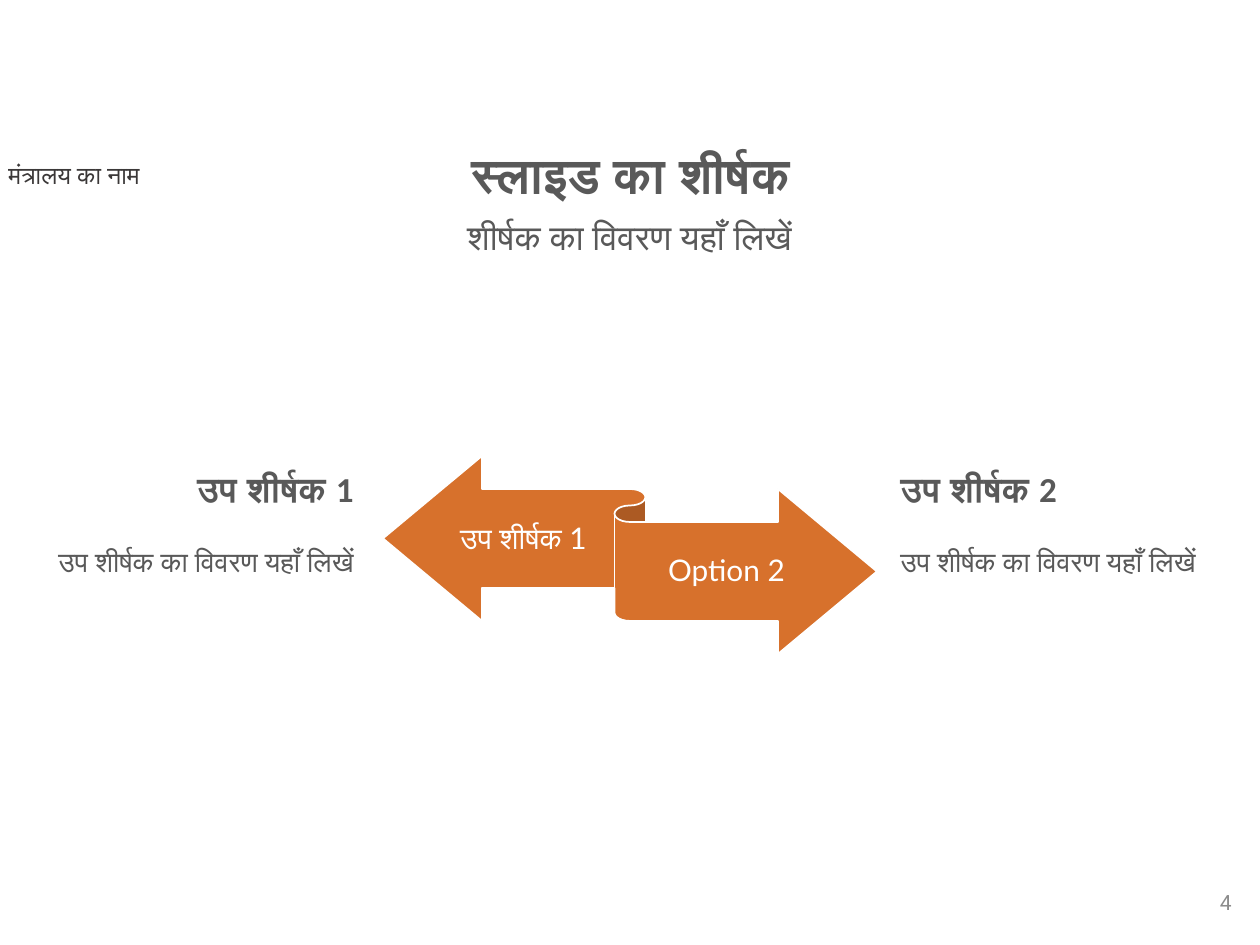
from pptx import Presentation
from pptx import util as u
from pptx.dml import color
from pptx.enum import shapes, text

PX = u.Inches(1) / 126
COLORS = {"orange": "D7712C", "white": "FFFFFF", "dark": "3B3838",
          "gray": "595959", "number": "8C8C8C"}
ALIGN = text.PP_ALIGN
ANCHOR = text.MSO_ANCHOR


def place(shape, box, anchor=ANCHOR.TOP):
    shape.left, shape.top, shape.width, shape.height = [u.Emu(round(n * PX)) for n in box]
    frame = shape.text_frame
    frame.word_wrap = True
    frame.auto_size = text.MSO_AUTO_SIZE.NONE
    frame.vertical_anchor = anchor
    return frame


def write(paragraph, wording, size, color_name, font="Calibri", bold=False,
          align=ALIGN.LEFT, spacing=1.0):
    paragraph.alignment = align
    paragraph.line_spacing = spacing
    run = paragraph.add_run()
    run.text = wording
    run.font.size = u.Pt(size)
    run.font.name = font
    run.font.bold = bold
    run.font.color.rgb = color.RGBColor.from_string(COLORS[color_name])


presentation = Presentation()
presentation.slide_width = u.Inches(10)
presentation.slide_height = u.Inches(7.5)
slide = presentation.slides.add_slide(presentation.slide_layouts[0])

ministry = place(slide.shapes.add_textbox(0, 0, 0, 0), (-4, 154, 275, 43))
write(ministry.paragraphs[0], "मंत्रालय का नाम", 14, "dark")

title = place(slide.shapes.title, (234, 145, 793, 59))
write(title.paragraphs[0], "स्लाइड का शीर्षक", 28, "gray", bold=True,
      align=ALIGN.CENTER, spacing=0.9)

subtitle = place(slide.placeholders[1], (184, 214, 891, 79))
subtitle.paragraphs[0].space_before = u.Pt(0)
write(subtitle.paragraphs[0], "शीर्षक का विवरण यहाँ लिखें", 20, "gray",
      align=ALIGN.CENTER, spacing=0.9)

ribbon = slide.shapes.add_shape(shapes.MSO_SHAPE.LEFT_RIGHT_RIBBON, 0, 0, 0, 0)
place(ribbon, (383, 456, 494, 198))
ribbon.shadow.inherit = False
ribbon.fill.solid()
ribbon.fill.fore_color.rgb = color.RGBColor.from_string(COLORS["orange"])
ribbon.line.color.rgb = color.RGBColor.from_string(COLORS["white"])
ribbon.line.width = u.Pt(1)

for wording, box in (("उप शीर्षक 1", (442, 491, 163, 97)),
                     ("Option 2", (630, 523, 193, 97))):
    label = place(slide.shapes.add_textbox(0, 0, 0, 0), box, ANCHOR.MIDDLE)
    label.margin_left = label.margin_right = 0
    write(label.paragraphs[0], wording, 17, "white", "Lato",
          align=ALIGN.CENTER, spacing=0.9)

for heading, left, align in (("उप शीर्षक 1", 35, ALIGN.RIGHT),
                             ("उप शीर्षक 2", 888, ALIGN.LEFT)):
    option = place(slide.shapes.add_textbox(0, 0, 0, 0), (left, 461, 331, 158))
    write(option.paragraphs[0], heading, 20, "gray", bold=True, align=align)
    detail = option.add_paragraph()
    detail.space_before = u.Pt(20)
    write(detail, "उप शीर्षक का विवरण यहाँ लिखें", 16, "gray", align=align)

number = place(slide.shapes.add_textbox(0, 0, 0, 0), (960, 877, 284, 50), ANCHOR.MIDDLE)
write(number.paragraphs[0], "4", 12, "number", "Roboto", align=ALIGN.RIGHT)

presentation.save("out.pptx")
